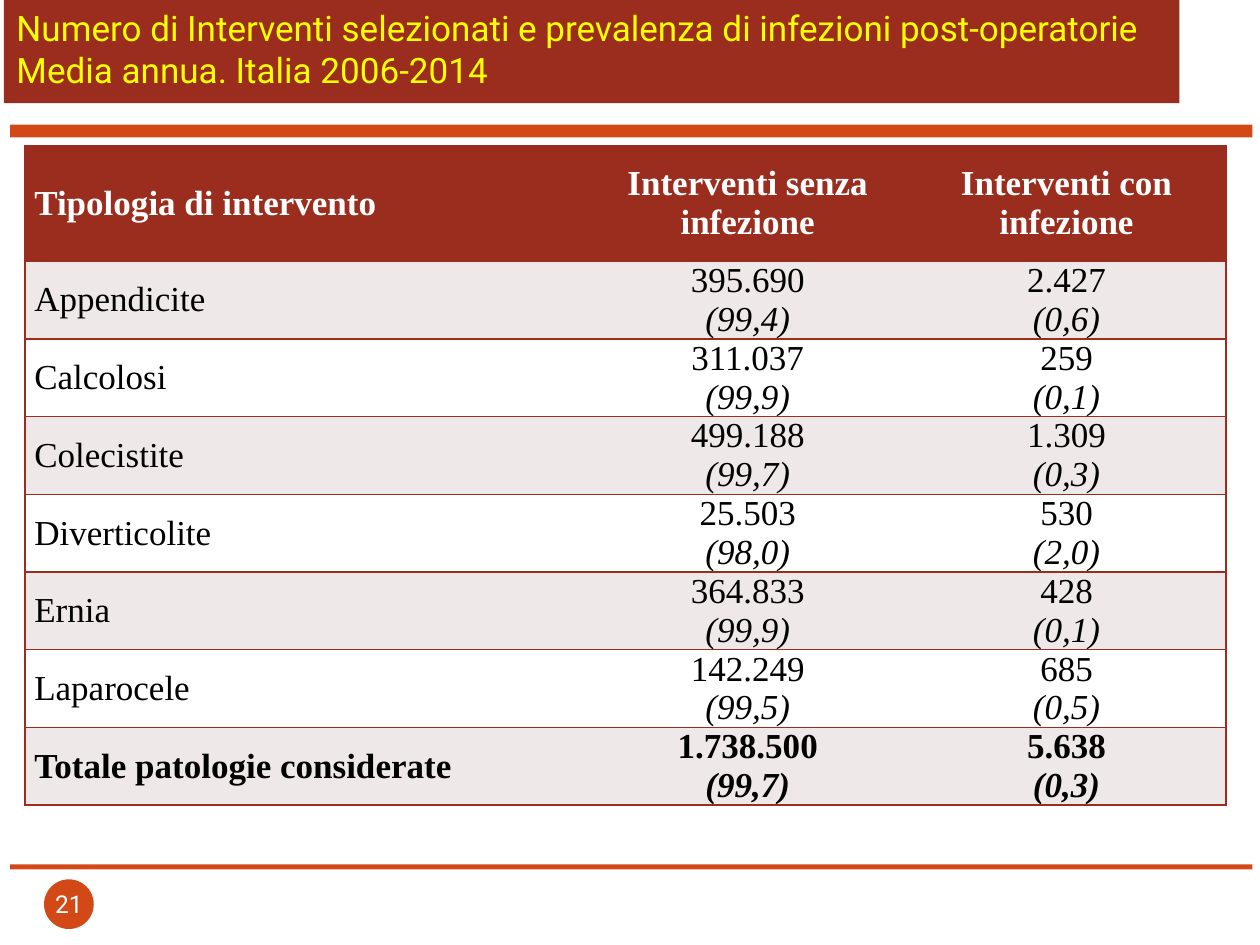
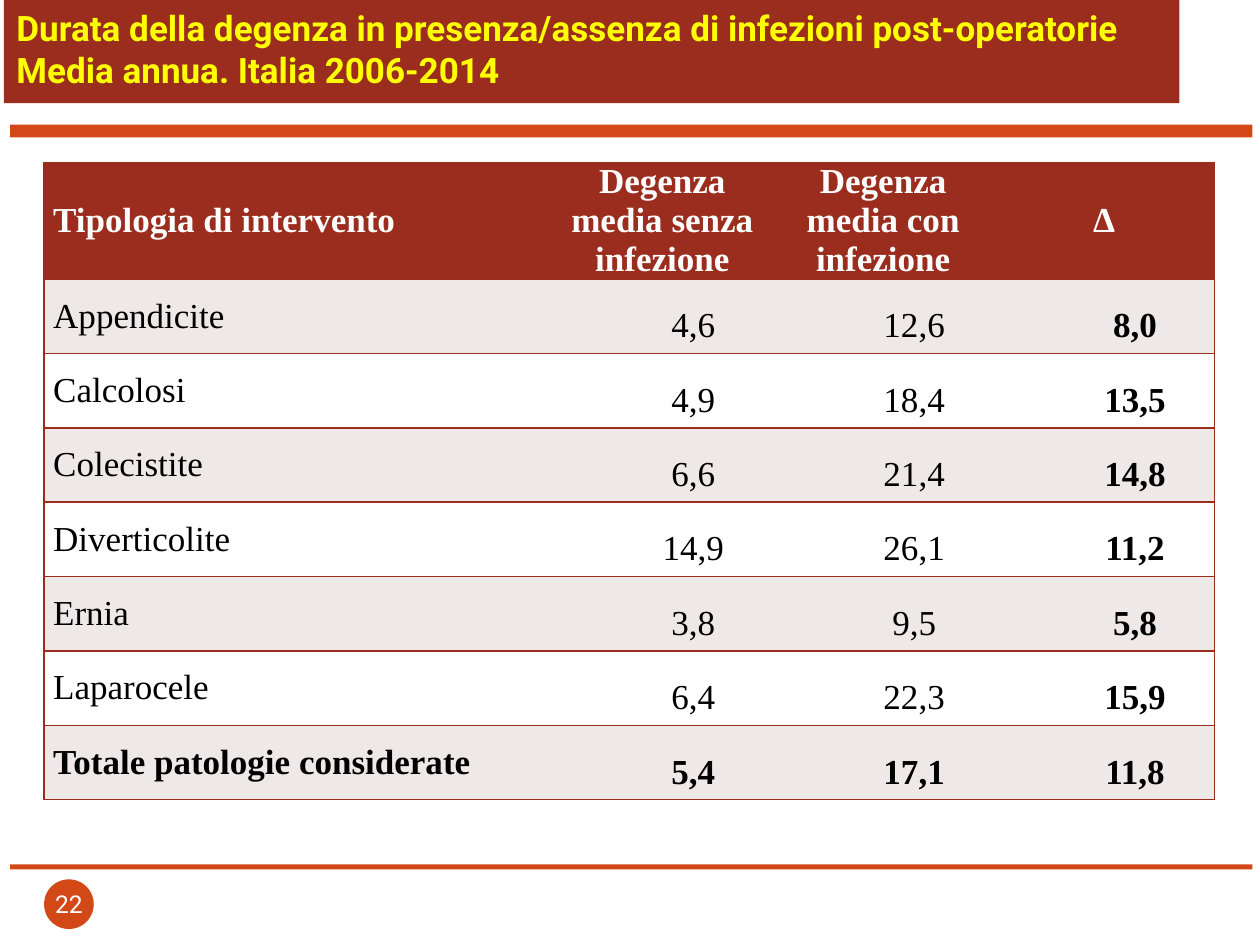
"""Build two slides on surgical interventions and post-operative infections."""
from dataclasses import dataclass

from lxml.etree import SubElement
from pptx import Presentation
from pptx.dml.color import RGBColor
from pptx.enum.shapes import MSO_SHAPE
from pptx.enum.text import MSO_ANCHOR, MSO_AUTO_SIZE, PP_ALIGN
from pptx.oxml.ns import qn
from pptx.util import Pt

PATHOLOGIES = ["Appendicite", "Calcolosi", "Colecistite", "Diverticolite", "Ernia",
               "Laparocele", "Totale patologie considerate"]
PERIOD = "Media annua. Italia 2006-2014"

SLIDES = [
    {
        "number": "21",
        "title": "Numero di Interventi selezionati e prevalenza di infezioni post-operatorie",
        "title_bold": False,
        "header": ["Tipologia di intervento", "Interventi senza infezione",
                   "Interventi con infezione"],
        "values": [
            ["395.690\n(99,4)", "2.427\n(0,6)"],
            ["311.037\n(99,9)", "259\n(0,1)"],
            ["499.188\n(99,7)", "1.309\n(0,3)"],
            ["25.503\n(98,0)", "530\n(2,0)"],
            ["364.833\n(99,9)", "428\n(0,1)"],
            ["142.249\n(99,5)", "685\n(0,5)"],
            ["1.738.500\n(99,7)", "5.638\n(0,3)"],
        ],
        "corner": (14.4, 83),
        "widths": (321.8, 182.2),
        "value_indent": 0,
        "value_spacing": 1,
        "bold_columns": (),
    },
    {
        "number": "22",
        "title": "Durata della degenza in presenza/assenza di infezioni post-operatorie",
        "title_bold": True,
        "header": ["Tipologia di intervento", "Degenza media senza infezione",
                   "Degenza media con infezione", "∆"],
        "values": [
            ["4,6", "12,6", "8,0"],
            ["4,9", "18,4", "13,5"],
            ["6,6", "21,4", "14,8"],
            ["14,9", "26,1", "11,2"],
            ["3,8", "9,5", "5,8"],
            ["6,4", "22,3", "15,9"],
            ["5,4", "17,1", "11,8"],
        ],
        "corner": (25.2, 92.9),
        "widths": (290.2, 126.2),
        "value_indent": 35.4,
        "value_spacing": 1.5,
        "bold_columns": (3,),
    },
]


@dataclass(frozen=True)
class Theme:
    brick: str = "9B2D1F"
    orange: str = "D34817"
    yellow: str = "FFFF00"
    white: str = "FFFFFF"
    black: str = "000000"
    stripe: str = "EFE8E8"
    title_font: str = "Roboto"
    table_font: str = "Times New Roman"
    text_size: float = 20
    number_size: float = 14
    header_height: float = 66.2
    row_height: float = 42.5


THEME = Theme()
BANDS = [(71.3, 7.2), (493.9, 2.9)]


def paint(fill, color):
    fill.solid()
    fill.fore_color.rgb = RGBColor.from_string(color)


def add_lines(paragraph, text, font, size, color, bold=False, italic_after_first=False):
    for index, line in enumerate(text.split("\n")):
        if index:
            paragraph.add_line_break()
        run = paragraph.add_run()
        run.text = line
        run.font.name = font
        run.font.size = Pt(size)
        run.font.bold = bold
        run.font.italic = italic_after_first and index > 0
        run.font.color.rgb = RGBColor.from_string(color)


def set_insets(frame, left, top, right, bottom):
    frame.margin_left, frame.margin_top = Pt(left), Pt(top)
    frame.margin_right, frame.margin_bottom = Pt(right), Pt(bottom)


def add_filled(slide, preset, left, top, width, height):
    shape = slide.shapes.add_shape(preset, Pt(left), Pt(top), Pt(width), Pt(height))
    shape.shadow.inherit = False
    paint(shape.fill, THEME.orange)
    shape.line.fill.background()
    return shape


def add_frame(slide, content):
    for top, height in BANDS:
        add_filled(slide, MSO_SHAPE.RECTANGLE, 5.8, top, 709.9, height)

    badge = add_filled(slide, MSO_SHAPE.OVAL, 25.2, 502.5, 28.4, 28.4).text_frame
    badge.word_wrap = False
    badge.vertical_anchor = MSO_ANCHOR.MIDDLE
    set_insets(badge, 0, 0, 0, 0)
    badge.paragraphs[0].alignment = PP_ALIGN.CENTER
    add_lines(badge.paragraphs[0], content["number"], THEME.title_font,
              THEME.number_size, THEME.white)

    title = slide.shapes.title
    title.left, title.top, title.width, title.height = Pt(2.2), Pt(0), Pt(671.8), Pt(59)
    paint(title.fill, THEME.brick)
    frame = title.text_frame
    frame.word_wrap = True
    frame.auto_size = MSO_AUTO_SIZE.NONE
    frame.vertical_anchor = MSO_ANCHOR.BOTTOM
    set_insets(frame, 7.2, 3.6, 7.2, 7.2)
    frame.paragraphs[0].alignment = PP_ALIGN.LEFT
    add_lines(frame.paragraphs[0], content["title"] + "\n" + PERIOD, THEME.title_font,
              THEME.text_size, THEME.yellow, content["title_bold"])


def add_borders(cell, is_first, is_last):
    properties = cell._tc.get_or_add_tcPr()
    for side, visible in (("L", is_first), ("R", is_last), ("T", True), ("B", True)):
        border = SubElement(properties, qn(f"a:ln{side}"), w=str(Pt(1)))
        if visible:
            solid = SubElement(border, qn("a:solidFill"))
            SubElement(solid, qn("a:srgbClr"), val=THEME.brick)
        else:
            SubElement(border, qn("a:noFill"))


def add_data_table(slide, content):
    rows = [content["header"]]
    rows += [[name, *values] for name, values in zip(PATHOLOGIES, content["values"])]
    column_count, total_row = len(rows[0]), len(rows) - 1
    label_width, value_width = content["widths"]
    left, top = content["corner"]
    table = slide.shapes.add_table(
        len(rows), column_count, Pt(left), Pt(top),
        Pt(label_width + value_width * (column_count - 1)),
        Pt(THEME.header_height + THEME.row_height * total_row)).table

    for index, column in enumerate(table.columns):
        column.width = Pt(value_width if index else label_width)
    for row_index, row in enumerate(rows):
        is_header = row_index == 0
        table.rows[row_index].height = Pt(THEME.header_height if is_header else THEME.row_height)
        background = THEME.brick if is_header else (THEME.white, THEME.stripe)[row_index % 2]
        for column_index, text in enumerate(row):
            cell = table.cell(row_index, column_index)
            add_borders(cell, column_index == 0, column_index == column_count - 1)
            paint(cell.fill, background)
            cell.vertical_anchor = MSO_ANCHOR.MIDDLE
            set_insets(cell, 5.2, 0, 5.2, 0)
            paragraph = cell.text_frame.paragraphs[0]
            if column_index:
                paragraph.alignment = PP_ALIGN.CENTER
            else:
                paragraph.alignment = PP_ALIGN.LEFT if is_header else PP_ALIGN.JUSTIFY
            if column_index and not is_header:
                paragraph.line_spacing = content["value_spacing"]
                indent = paragraph._p.get_or_add_pPr()
                indent.set("marL", "0")
                indent.set("indent", str(Pt(content["value_indent"])))
            bold = row_index in (0, total_row) or column_index in content["bold_columns"]
            add_lines(paragraph, text, THEME.table_font, THEME.text_size,
                      THEME.white if is_header else THEME.black, bold, True)


def main():
    presentation = Presentation()
    presentation.slide_width, presentation.slide_height = Pt(720), Pt(540)
    for content in SLIDES:
        slide = presentation.slides.add_slide(presentation.slide_layouts[5])
        add_frame(slide, content)
        add_data_table(slide, content)
    presentation.save("out.pptx")


if __name__ == "__main__":
    main()
